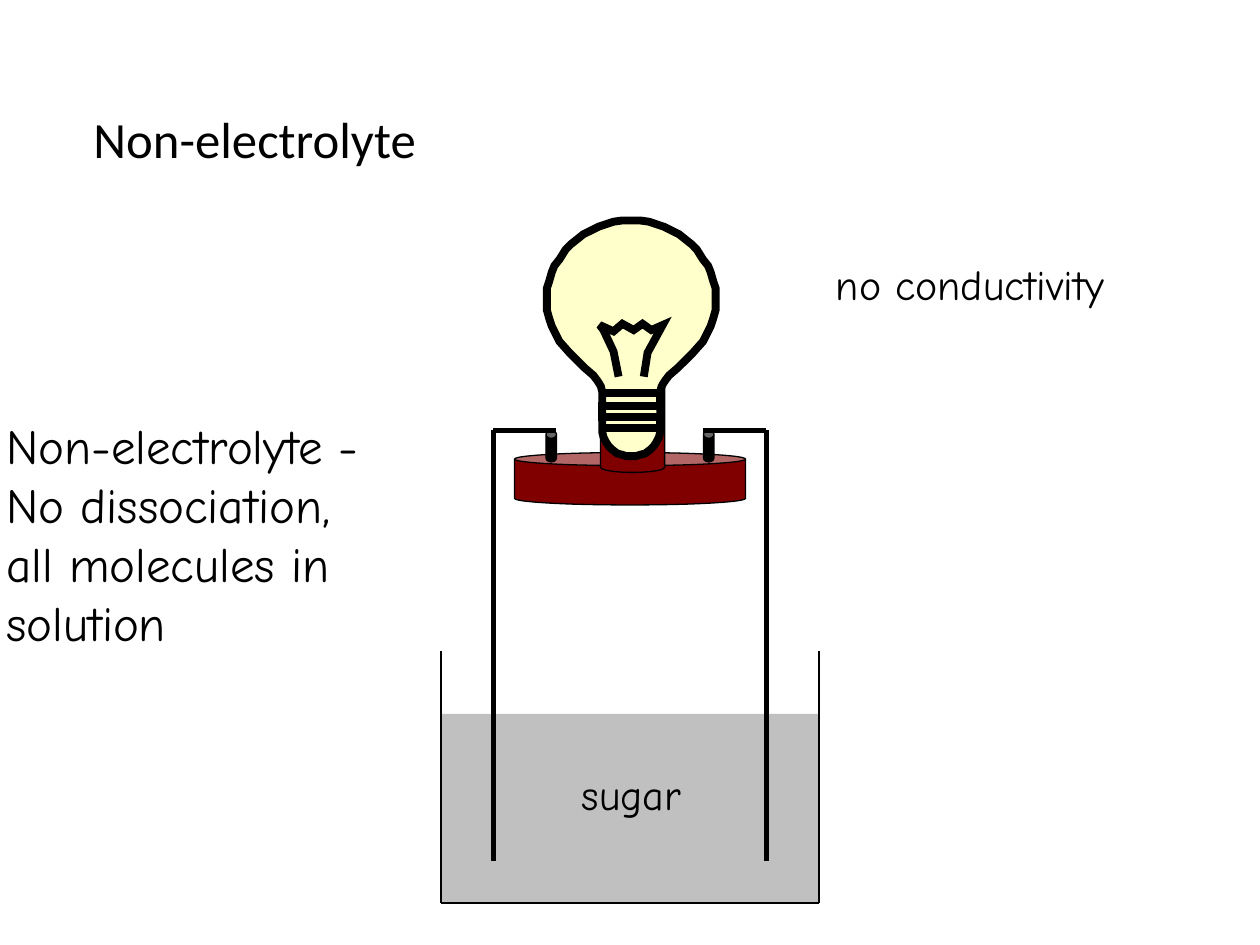
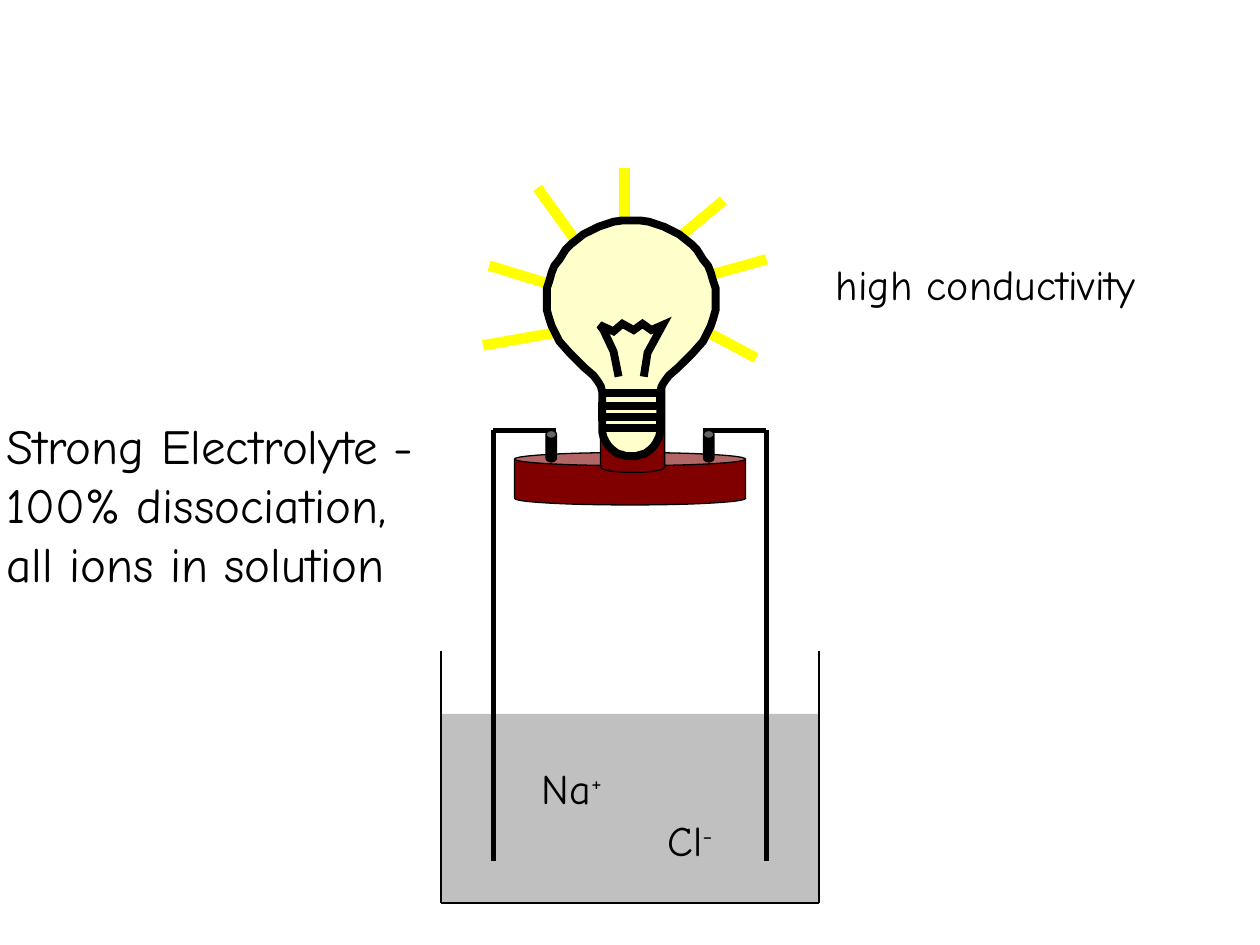
import pptx
import pptx.dml.color
import pptx.enum.shapes
import pptx.enum.text
import pptx.oxml.ns
import pptx.util
from lxml import etree

RGBColor = pptx.dml.color.RGBColor
Shape = pptx.enum.shapes.MSO_SHAPE
AutoSize = pptx.enum.text.MSO_AUTO_SIZE

BLACK = RGBColor(0x00, 0x00, 0x00)
SOLUTION_GREY = RGBColor(0xC0, 0xC0, 0xC0)
HOLDER_RED = RGBColor(0x80, 0x00, 0x00)
GLASS = RGBColor(0xFF, 0xFF, 0xCC)
LIGHT = RGBColor(0xFF, 0xFF, 0x00)

TITLE_FONT = "Calibri"
TEXT_FONT = "Comic Neue"
COLUMNS, ROWS = 120, 90
FINE_COLUMNS = 1000
INSET = 0.6
THIN, WIRE, BULB, RAY = 0.75, 3, 4.5, 6

# Bulb drawing, in fine columns
BULB_AXIS = 501
GLASS_RIGHT = [
    (501, 362), (505, 362), (508, 361), (512, 360), (516, 357), (519, 354),
    (521, 351), (523, 347), (524, 343), (524, 311), (525, 307), (526, 305),
    (528, 302), (531, 298), (538, 292), (546, 284), (550, 280), (558, 271),
    (561, 265), (564, 259), (566, 253), (568, 246), (568, 229), (566, 223),
    (564, 216), (562, 211), (558, 206), (553, 198), (549, 194), (544, 190),
    (539, 186), (533, 183), (527, 180), (521, 178), (515, 176), (508, 175),
]
GLASS_LEFT = [(2 * BULB_AXIS - x, y) for x, y in reversed(GLASS_RIGHT[1:])]
FILAMENT = [
    (491, 299), (487, 279), (479, 262), (476, 258), (487, 263), (494, 257),
    (503, 262), (510, 257), (517, 262), (526, 258), (514, 280), (511, 299),
]
SCREW_THREAD = [
    (478, 312), (524, 312), (524, 322), (478, 322),
    (478, 331), (524, 331), (524, 340), (478, 340),
]

# Light rays, in columns and rows, from the glass outwards
RAYS = [
    (66.2, 31, 72, 34.1), (66.2, 26.6, 73, 24.7),
    (52.8, 31.7, 46, 32.9), (52.8, 27.2, 46.6, 25.3),
    (54.8, 22.9, 51.2, 17.9), (59.5, 22.2, 59.5, 16),
    (63.6, 23.5, 68.9, 19.1),
]


class Sketch:
    """Draws styled elements on the current slide, placed by columns and rows."""

    def __init__(self):
        self.deck = pptx.Presentation()
        self.deck.slide_width = pptx.util.Inches(10)
        self.deck.slide_height = pptx.util.Inches(7.5)
        self.page = None

    def new_page(self, layout):
        self.page = self.deck.slides.add_slide(
            self.deck.slide_layouts.get_by_name(layout))

    def place(self, *lengths):
        """Turn alternating columns and rows into slide lengths."""
        units = (self.deck.slide_width / COLUMNS, self.deck.slide_height / ROWS)
        return [pptx.util.Emu(round(length * units[index % 2]))
                for index, length in enumerate(lengths)]

    def paint(self, shape, fill=None, width=None):
        shape.shadow.inherit = False
        if fill is None:
            shape.fill.background()
        else:
            shape.fill.solid()
            shape.fill.fore_color.rgb = fill
        if width is None:
            shape.line.fill.background()
        else:
            shape.line.color.rgb = BLACK
            shape.line.width = pptx.util.Pt(width)

    def solid(self, kind, area, fill, width=None, lid=None):
        shape = self.page.shapes.add_shape(kind, *self.place(*area))
        self.paint(shape, fill, width)
        if lid is not None:
            shape.adjustments[0] = lid

    def line(self, ends, width, color=BLACK):
        line = self.page.shapes.add_connector(
            pptx.enum.shapes.MSO_CONNECTOR.STRAIGHT, *self.place(*ends))
        line.line.color.rgb = color
        line.line.width = pptx.util.Pt(width)
        etree.SubElement(line._element.spPr, pptx.oxml.ns.qn("a:effectLst"))

    def outline(self, strokes, width, fill=None):
        """Draw strokes as one freeform, closed when it has a fill."""
        builder = self.page.shapes.build_freeform(
            *strokes[0][0], scale=self.deck.slide_width / FINE_COLUMNS)
        for index, stroke in enumerate(strokes):
            if index:
                builder.move_to(*stroke[0])
            builder.add_line_segments(stroke[1:], close=fill is not None)
        shape = builder.convert_to_shape()
        self.paint(shape, fill, width)
        line = shape._element.spPr.find(pptx.oxml.ns.qn("a:ln"))
        etree.SubElement(line, pptx.oxml.ns.qn("a:miter"), lim="800000")

    def set_insets(self, frame):
        (frame.margin_left, frame.margin_top,
         frame.margin_right, frame.margin_bottom) = self.place(*[INSET] * 4)

    def add_span(self, para, text, size, font=TEXT_FONT, raised=False):
        span = para.add_run()
        span.text = text
        span.font.size = pptx.util.Pt(size)
        span.font.name = font
        span.font.color.rgb = BLACK
        if raised:
            span._r.get_or_add_rPr().set("baseline", "30000")

    def title(self, text):
        box = self.page.shapes.title
        box.left, box.top, box.width, box.height = self.place(8.3, 4.8, 103.5, 17.4)
        frame = box.text_frame
        self.set_insets(frame)
        frame.auto_size = AutoSize.NONE
        frame.vertical_anchor = pptx.enum.text.MSO_ANCHOR.MIDDLE
        para = frame.paragraphs[0]
        para.alignment = pptx.enum.text.PP_ALIGN.LEFT
        para.line_spacing = 0.9
        self.add_span(para, text, 29, TITLE_FONT)

    def text(self, area, lines, size, charge="", wrap=False):
        box = self.page.shapes.add_textbox(*self.place(*area))
        frame = box.text_frame
        self.set_insets(frame)
        frame.word_wrap = wrap
        frame.auto_size = AutoSize.SHAPE_TO_FIT_TEXT
        for index, line in enumerate(lines):
            para = frame.add_paragraph() if index else frame.paragraphs[0]
            self.add_span(para, line, size)
        if charge:
            self.add_span(para, charge, size, raised=True)

    def label(self, column, row, width, text, charge=""):
        self.text((column, row, width, 6.7), [text], 24, charge)

    def explanation(self, height, lines):
        self.text((0, 39, 48, height), lines, 28, wrap=True)


def draw_lamp(sketch):
    sketch.solid(Shape.CAN, (49, 43.1, 22, 5), HOLDER_RED, THIN, lid=0.25)
    sketch.solid(Shape.CAN, (57.2, 35.6, 6.1, 9.4), HOLDER_RED, THIN, lid=0.16)
    for column in (52, 67):
        sketch.solid(Shape.CAN, (column, 41, 1, 3), BLACK, THIN, lid=0.75)
    sketch.outline([GLASS_RIGHT + GLASS_LEFT], BULB, GLASS)
    sketch.outline([FILAMENT, SCREW_THREAD], BULB)


def draw_beaker(sketch):
    left, right, rim, bottom = 42, 78, 62, 86
    sketch.solid(Shape.RECTANGLE, (left, 68, right - left, 18), SOLUTION_GREY)
    sketch.line((left, rim, left, bottom), THIN)
    sketch.line((left, bottom, right, bottom), THIN)
    sketch.line((right, bottom, right, rim), THIN)


def draw_wires(sketch):
    for pin, electrode in ((67, 73), (53, 47)):
        sketch.line((pin, 41, electrode, 41), WIRE)
        sketch.line((electrode, 41, electrode, 82), WIRE)


def non_electrolyte(sketch):
    sketch.new_page("Title Only")
    draw_lamp(sketch)
    sketch.title("Non-electrolyte")
    draw_beaker(sketch)
    draw_wires(sketch)
    sketch.label(54.8, 72.6, 11.5, "sugar")
    sketch.explanation(27.2, ["Non-electrolyte -", "No dissociation,",
                              "all molecules in solution"])
    sketch.label(79, 24, 29.5, "no conductivity")


def strong_electrolyte(sketch):
    sketch.new_page("Blank")
    draw_beaker(sketch)
    draw_wires(sketch)
    for ray in RAYS:
        sketch.line(ray, RAY, LIGHT)
    draw_lamp(sketch)
    sketch.label(51, 72, 7.9, "Na", "+")
    sketch.label(63, 77, 6, "Cl", "-")
    sketch.explanation(20.6, ["Strong Electrolyte -", "100% dissociation,",
                              "all ions in solution"])
    sketch.label(79, 24, 33.2, "high conductivity")


def main():
    sketch = Sketch()
    non_electrolyte(sketch)
    strong_electrolyte(sketch)
    sketch.deck.save("out.pptx")


if __name__ == "__main__":
    main()
